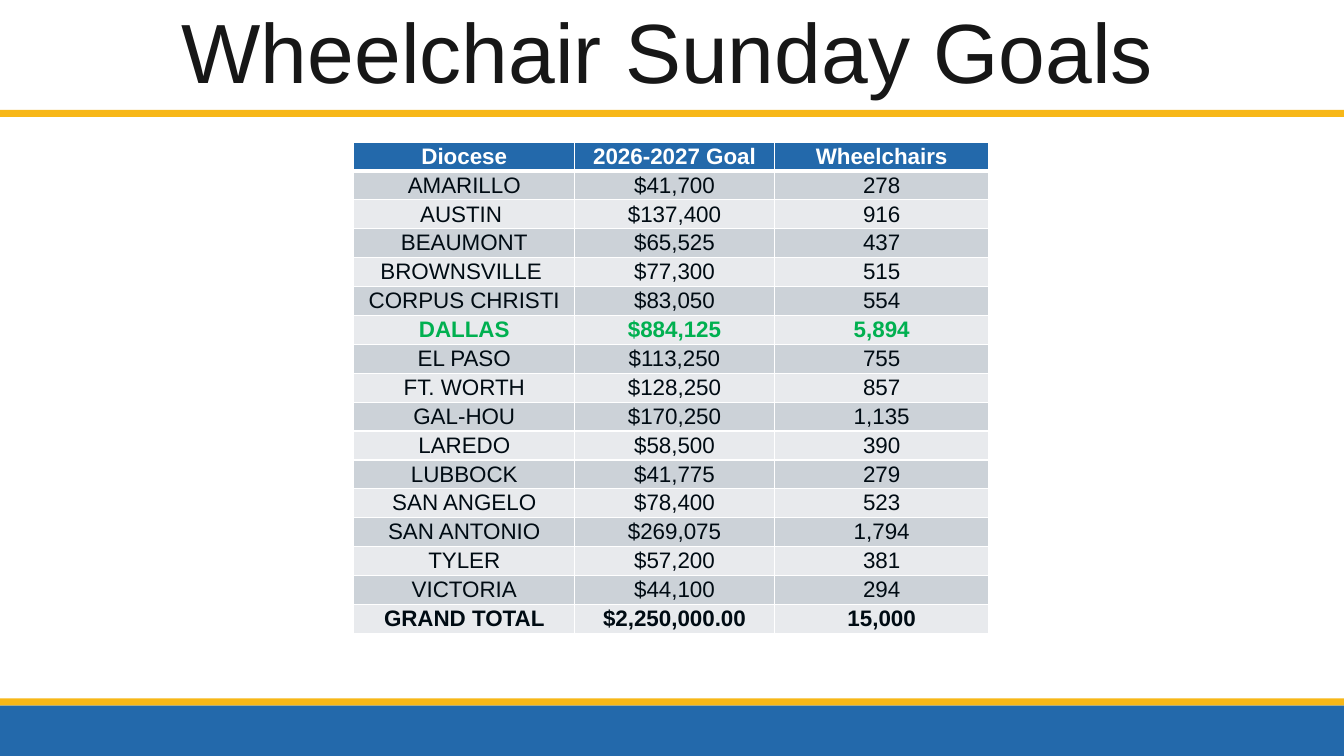
from dataclasses import dataclass
from typing import Any

from lxml.etree import SubElement
from pptx import Presentation
from pptx.dml.color import RGBColor
from pptx.enum.shapes import MSO_SHAPE as Shape
from pptx.enum.text import MSO_ANCHOR as Anchor, PP_ALIGN as Align
from pptx.oxml.ns import qn
from pptx.util import Inches, Pt

BLUE, GOLD, WHITE = "2369AB", "F7B718", "FFFFFF"
INK, GREEN, TITLE_INK = "000B13", "00B050", "171717"
BANDS = ("E8EAED", "CCD2D8")
SLIDE_WIDTH, SLIDE_HEIGHT = 13.33, 7.5
COLUMN_WIDTHS = (2.19, 1.98, 2.13)
ROW_HEIGHT = 0.27


@dataclass(frozen=True)
class Bar:
    top: float
    height: float
    color: str


@dataclass(frozen=True)
class Goal:
    diocese: str
    amount: str
    wheelchairs: str
    color: str = INK
    bold: bool = False


BARS = (Bar(6.93, 0.07, GOLD), Bar(7, 0.5, BLUE), Bar(1.09, 0.07, GOLD))

GOALS = (
    Goal("Diocese", "2026-2027 Goal", "Wheelchairs", WHITE, True),
    Goal("AMARILLO", "$41,700", "278"),
    Goal("AUSTIN ", "$137,400", "916"),
    Goal("BEAUMONT", "$65,525", "437"),
    Goal("BROWNSVILLE ", "$77,300", "515"),
    Goal("CORPUS CHRISTI", "$83,050", "554"),
    Goal("DALLAS", "$884,125", "5,894", GREEN, True),
    Goal("EL PASO", "$113,250", "755"),
    Goal("FT. WORTH", "$128,250", "857"),
    Goal("GAL-HOU", "$170,250", "1,135"),
    Goal("LAREDO", "$58,500", "390"),
    Goal("LUBBOCK", "$41,775", "279"),
    Goal("SAN ANGELO", "$78,400", "523"),
    Goal("SAN ANTONIO", "$269,075", "1,794"),
    Goal("TYLER", "$57,200", "381"),
    Goal("VICTORIA", "$44,100", "294"),
    Goal("GRAND TOTAL", "$2,250,000.00", "15,000", bold=True),
)


def rgb(color: str) -> RGBColor:
    return RGBColor.from_string(color)


def apply(target: Any, values: dict[str, Any]) -> None:
    for name, value in values.items():
        setattr(target, name, value)


def write(paragraph: Any, text: str, size: int, color: str, bold: bool = False) -> None:
    paragraph.alignment = Align.CENTER
    run = paragraph.add_run()
    run.text = text
    apply(run.font, {"name": "Arial", "size": Pt(size), "bold": bold})
    run.font.color.rgb = rgb(color)


def add_bar(slide: Any, bar: Bar) -> None:
    shape = slide.shapes.add_shape(
        Shape.RECTANGLE, 0, Inches(bar.top), Inches(SLIDE_WIDTH), Inches(bar.height)
    )
    shape.shadow.inherit = False
    shape.fill.solid()
    shape.fill.fore_color.rgb = rgb(bar.color)
    shape.line.fill.background()


def add_title(slide: Any, text: str) -> None:
    box = slide.shapes.add_textbox(Inches(1.12), Inches(0.14), Inches(11), Inches(0.91))
    apply(box.text_frame, {"word_wrap": True, "vertical_anchor": Anchor.BOTTOM})
    paragraph = box.text_frame.paragraphs[0]
    paragraph.line_spacing = 0.85
    write(paragraph, text, 60, TITLE_INK)


def add_border(cell: Any, side: str, points: float) -> None:
    properties = cell._tc.get_or_add_tcPr()
    line = SubElement(properties, qn(f"a:{side}"), w=str(Pt(points)))
    fill = SubElement(line, qn("a:solidFill"))
    SubElement(fill, qn("a:srgbClr"), val=WHITE)


def add_goal_table(slide: Any, goals: tuple[Goal, ...]) -> None:
    table = slide.shapes.add_table(
        len(goals), len(COLUMN_WIDTHS), Inches(3.51), Inches(1.41),
        Inches(sum(COLUMN_WIDTHS)), Inches(ROW_HEIGHT * len(goals)),
    ).table
    for column, width in zip(table.columns, COLUMN_WIDTHS):
        column.width = Inches(width)
    cell_format = {
        "vertical_anchor": Anchor.MIDDLE,
        "margin_left": Inches(0.04),
        "margin_right": Inches(0.04),
        "margin_top": Inches(0.01),
        "margin_bottom": Inches(0.01),
    }
    for index, (row, goal) in enumerate(zip(table.rows, goals)):
        row.height = Inches(ROW_HEIGHT)
        fill = BANDS[index % 2] if index else BLUE
        borders = {
            "lnL": 1,
            "lnR": 1,
            "lnT": 3 if index == 1 else 1,
            "lnB": 3 if index == 0 else 1,
        }
        for cell, text in zip(row.cells, (goal.diocese, goal.amount, goal.wheelchairs)):
            apply(cell, cell_format)
            for side, points in borders.items():
                add_border(cell, side, points)
            cell.fill.solid()
            cell.fill.fore_color.rgb = rgb(fill)
            write(cell.text_frame.paragraphs[0], text, 16, goal.color, goal.bold)


def main() -> None:
    presentation = Presentation()
    apply(presentation, {
        "slide_width": Inches(SLIDE_WIDTH),
        "slide_height": Inches(SLIDE_HEIGHT),
    })
    slide = presentation.slides.add_slide(presentation.slide_layouts[6])
    for bar in BARS:
        add_bar(slide, bar)
    add_title(slide, "Wheelchair Sunday Goals")
    add_goal_table(slide, GOALS)
    presentation.save("out.pptx")


if __name__ == "__main__":
    main()
